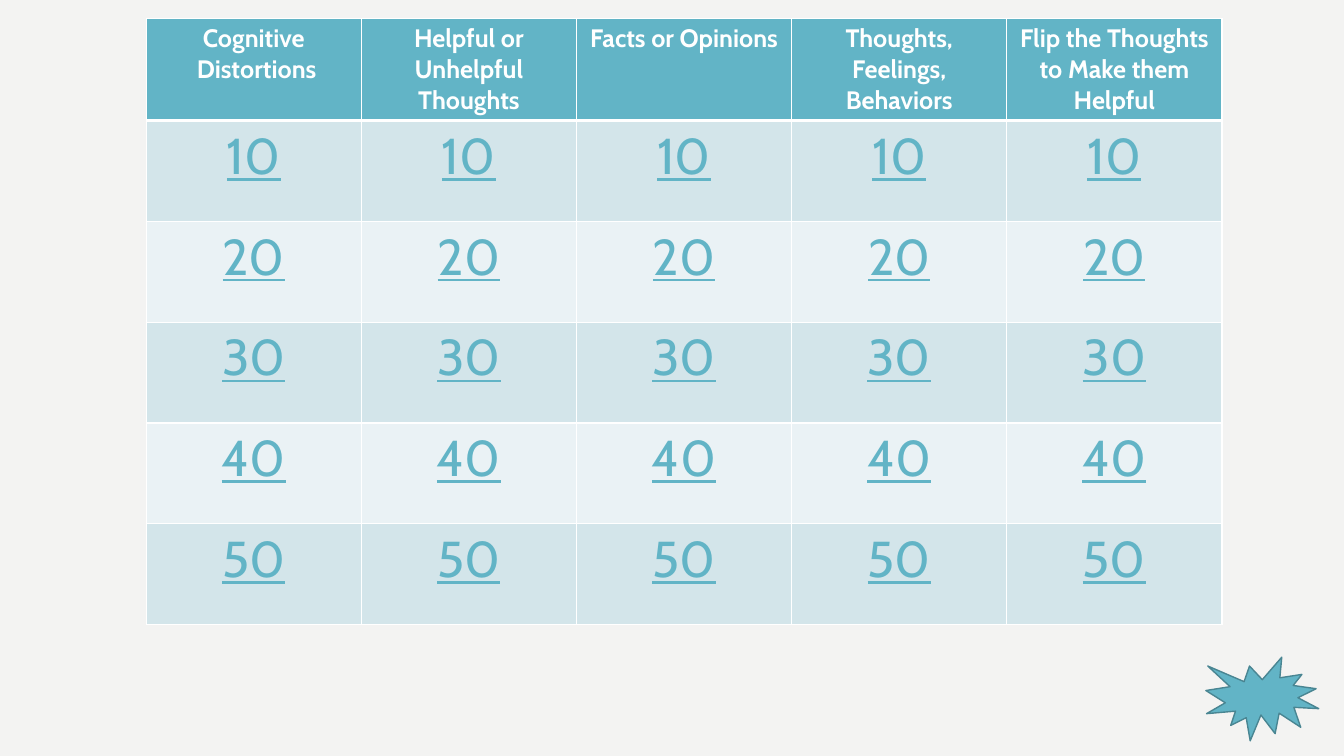
import pptx
import pptx.util
import pptx.dml.color
import pptx.enum.shapes
import pptx.enum.text
import pptx.oxml
import pptx.oxml.ns

Inches = pptx.util.Inches
Pt = pptx.util.Pt


def rgb(value):
    return pptx.dml.color.RGBColor.from_string(value)


def add_border(cell, side, width):
    tcPr = cell._tc.get_or_add_tcPr()
    tcPr.append(pptx.oxml.parse_xml(
        f'<a:ln{side} {pptx.oxml.ns.nsdecls("a")} w="{Pt(width)}">'
        f'<a:solidFill><a:srgbClr val="{WHITE}"/></a:solidFill></a:ln{side}>'))


WHITE = "FFFFFF"
TEAL = "62B4C6"
BANDS = ["EAF2F5", "D3E5EA"]
categories = [
    "Cognitive\n Distortions",
    "Helpful or Unhelpful Thoughts",
    "Facts or Opinions",
    "Thoughts, Feelings, Behaviors",
    "Flip the Thoughts to Make them Helpful",
]
points = [10, 20, 30, 40, 50]
rows = [categories] + [[str(value)] * len(categories) for value in points]

prs = pptx.Presentation()
prs.slide_width = Inches(13.33)
prs.slide_height = Inches(7.5)
s = prs.slides.add_slide(prs.slide_layouts[6])
s.background.fill.solid()
s.background.fill.fore_color.rgb = rgb("F3F3F2")

board = s.shapes.add_table(len(rows), len(categories), Inches(1.45), Inches(0.18),
                           Inches(10.67), Inches(6)).table
for column in board.columns:
    column.width = Inches(10.67 / len(categories))

for i, texts in enumerate(rows):
    board.rows[i].height = Inches(1)
    header = i == 0
    for j, text in enumerate(texts):
        cell = board.cell(i, j)
        for side in "LRTB":
            thick = (header and side == "B") or (i == 1 and side == "T")
            add_border(cell, side, 3 if thick else 1)
        cell.fill.solid()
        cell.fill.fore_color.rgb = rgb(TEAL if header else BANDS[i % 2])
        p = cell.text_frame.paragraphs[0]
        p.alignment = pptx.enum.text.PP_ALIGN.CENTER
        for k, line in enumerate(text.split("\n")):
            if k:
                p.add_line_break()
            r = p.add_run()
            r.text = line
            r.font.name = "Cabin"
            r.font.size = Pt(18 if header else 36)
            r.font.bold = header
            r.font.underline = not header
            r.font.color.rgb = rgb(WHITE if header else TEAL)

burst = s.shapes.add_shape(pptx.enum.shapes.MSO_SHAPE.EXPLOSION1,
                           Inches(11.96), Inches(6.52), Inches(1.12), Inches(0.83))
burst.shadow.inherit = False
burst.fill.solid()
burst.fill.fore_color.rgb = rgb(TEAL)
burst.line.color.rgb = rgb("498592")
burst.line.width = Pt(1)

prs.save("out.pptx")
